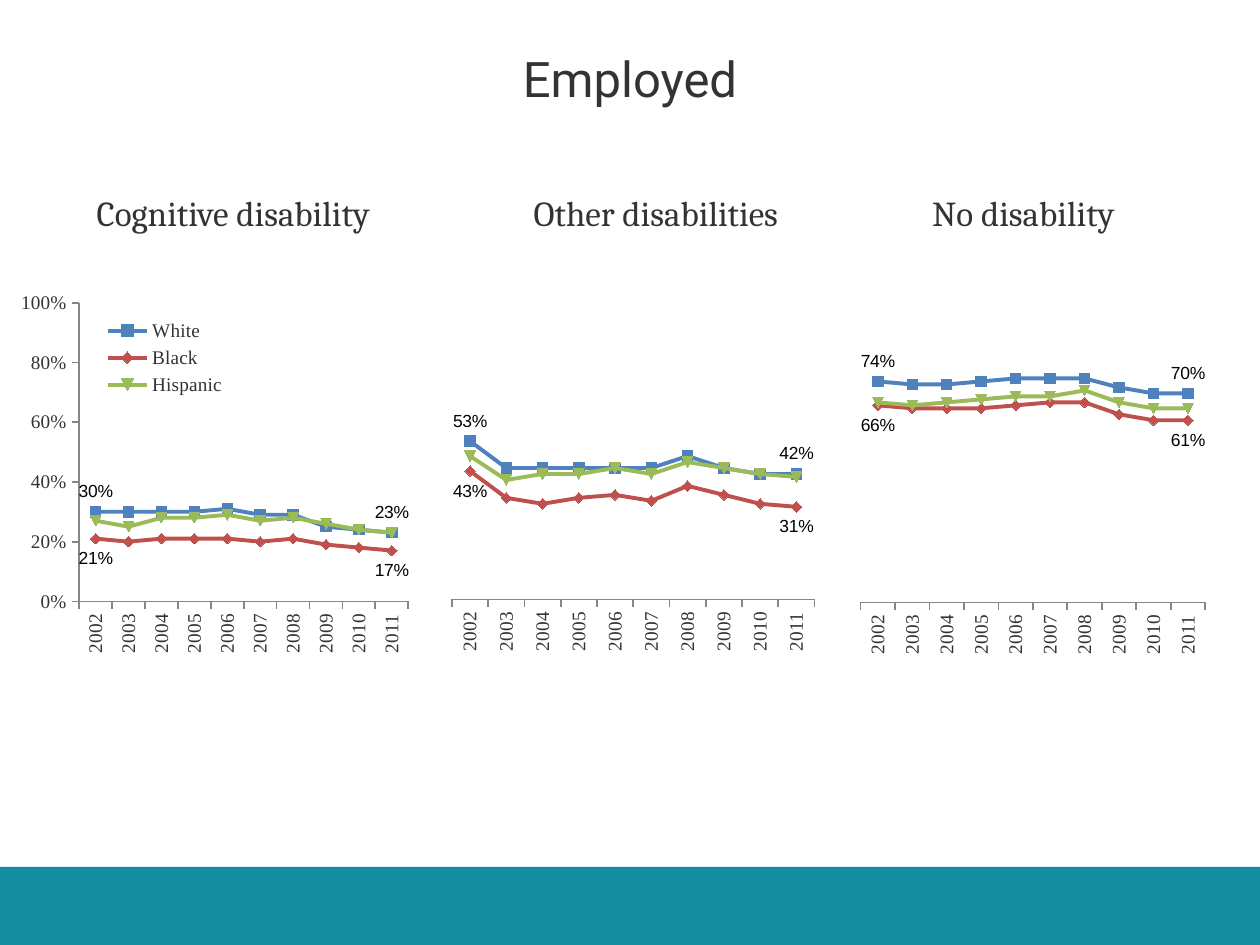
from lxml import etree
from pptx import Presentation
from pptx import util as u
from pptx.chart.data import CategoryChartData
from pptx.dml.color import RGBColor
from pptx.enum import chart as ch, shapes, text
from pptx.oxml.ns import qn

PX = 914400 / 126
TEAL = RGBColor(0x16, 0x8E, 0xA2)
INK = RGBColor(0x33, 0x33, 0x33)
BLACK = RGBColor(0, 0, 0)
GREY = RGBColor(0x86, 0x86, 0x86)
BLUE = RGBColor(0x4F, 0x81, 0xBD)
RED = RGBColor(0xC0, 0x50, 0x4D)
GREEN = RGBColor(0x9B, 0xBB, 0x59)

YEARS = [str(year) for year in range(2002, 2012)]
ABOVE, BELOW = ch.XL_LABEL_POSITION.ABOVE, ch.XL_LABEL_POSITION.BELOW
# Group name, line colour, position of the first and last value labels
GROUPS = [("White", BLUE, ABOVE), ("Black", RED, BELOW), ("Hispanic", GREEN, None)]

COGNITIVE = [
    [.30, .30, .30, .30, .31, .29, .29, .25, .24, .23],
    [.21, .20, .21, .21, .21, .20, .21, .19, .18, .17],
    [.27, .25, .28, .28, .29, .27, .28, .26, .24, .23],
]
OTHER = [
    [.53, .44, .44, .44, .44, .44, .48, .44, .42, .42],
    [.43, .34, .32, .34, .35, .33, .38, .35, .32, .31],
    [.48, .40, .42, .42, .44, .42, .46, .44, .42, .41],
]
NONE = [
    [.74, .73, .73, .74, .75, .75, .75, .72, .70, .70],
    [.66, .65, .65, .65, .66, .67, .67, .63, .61, .61],
    [.67, .66, .67, .68, .69, .69, .71, .67, .65, .65],
]


def px(length):
    return u.Emu(int(length * PX))


def set_layout(parent, index, box, inner=False):
    """Give a plot area or legend a fixed place, as fractions of the chart."""
    for old in parent.findall(qn("c:layout")):
        parent.remove(old)
    layout = etree.Element(qn("c:layout"))
    manual = etree.SubElement(layout, qn("c:manualLayout"))
    settings = [("layoutTarget", "inner")] if inner else []
    settings += [("xMode", "edge"), ("yMode", "edge"), *zip("xywh", box)]
    for name, value in settings:
        etree.SubElement(manual, qn("c:" + name)).set("val", str(value))
    parent.insert(index, layout)


class Deck:
    heading_font = "Roboto"
    body_font = "Cambria"
    axis_font = "Times New Roman"
    label_font = "Arial"

    def __init__(self):
        self.presentation = Presentation()
        self.presentation.slide_width = px(1260)
        self.presentation.slide_height = px(945)
        self.slide = self.presentation.slides.add_slide(
            self.presentation.slide_layouts[5])

    def style(self, font, name, size, color=INK):
        font.name, font.size, font.bold = name, u.Pt(size), False
        font.color.rgb = color

    def bar(self, left, top, width, height, color):
        shape = self.slide.shapes.add_shape(
            shapes.MSO_SHAPE.RECTANGLE, px(left), px(top), px(width), px(height))
        shape.shadow.inherit = False
        shape.fill.solid()
        shape.fill.fore_color.rgb = color
        shape.line.fill.background()

    def title(self, words, left, top, width, height):
        title = self.slide.shapes.title
        title.left, title.top = px(left), px(top)
        title.width, title.height = px(width), px(height)
        frame = title.text_frame
        frame.text = words
        frame.vertical_anchor = text.MSO_ANCHOR.MIDDLE
        paragraph = frame.paragraphs[0]
        paragraph.alignment = text.PP_ALIGN.CENTER
        self.style(paragraph.runs[0].font, self.heading_font, 28)

    def headings(self, words, left, top, widths, row_height):
        table = self.slide.shapes.add_table(
            2, len(words), px(left), px(top), px(sum(widths)), px(2 * row_height)).table
        table.horz_banding = False
        for row in table.rows:
            row.height = px(row_height)
        for column, width in zip(table.columns, widths):
            column.width = px(width)
        for cell in table.iter_cells():
            cell.fill.background()
        table.cell(0, 0).merge(table.cell(1, 0))
        table.cell(1, 1).merge(table.cell(1, 2))
        for index, word in enumerate(words):
            cell = table.cell(0, index)
            cell.text = word
            paragraph = cell.text_frame.paragraphs[0]
            if index:
                paragraph.alignment = text.PP_ALIGN.CENTER
            self.style(paragraph.runs[0].font, self.body_font, 20)

    def axis(self, axis):
        axis.has_major_gridlines = False
        axis.major_tick_mark = ch.XL_TICK_MARK.OUTSIDE
        axis.minor_tick_mark = ch.XL_TICK_MARK.NONE
        axis.format.line.color.rgb = GREY
        axis.format.line.width = u.Pt(1)
        self.style(axis.tick_labels.font, self.axis_font, 11)

    def line_chart(self, rows, left, top, width, height, plot_box, keyed=False):
        data = CategoryChartData(number_format="0%")
        data.categories = YEARS
        for (name, _, _), values in zip(GROUPS, rows):
            data.add_series(name, values)
        chart = self.slide.shapes.add_chart(
            ch.XL_CHART_TYPE.LINE_MARKERS, px(left), px(top), px(width), px(height),
            data).chart
        chart.has_title = False
        self.style(chart.font, self.body_font, 10)
        chart.plots[0].vary_by_categories = False

        # Axes: years read upwards, the share scale shows on the keyed chart only
        years, share = chart.category_axis, chart.value_axis
        self.axis(years)
        self.axis(share)
        body = years._element.find(qn("c:txPr")).find(qn("a:bodyPr"))
        body.set("rot", "-5400000")
        body.set("vert", "horz")
        share.minimum_scale, share.maximum_scale, share.major_unit = 0, 1, 0.2
        share.tick_labels.number_format = "###0%"
        share.tick_labels.number_format_is_linked = False
        share.visible = keyed
        plot_area = chart._chartSpace.chart.plotArea
        set_layout(plot_area, 0, plot_box, inner=True)

        # Legend
        chart.has_legend = keyed
        if keyed:
            chart.legend.position = ch.XL_LEGEND_POSITION.RIGHT
            chart.legend.include_in_layout = False
            self.style(chart.legend.font, self.axis_font, 11)
            set_layout(chart.legend._element, 1, (0.18, 0.08, 0.29, 0.23))

        # Lines, markers and end labels
        for series, (_, color, position) in zip(chart.plots[0].series, GROUPS):
            series.smooth = False
            series.format.line.color.rgb = color
            series.format.line.width = u.Pt(2.25)
            series.marker.size = 6
            series.marker.format.fill.solid()
            series.marker.format.fill.fore_color.rgb = color
            series.marker.format.line.color.rgb = color
            if position is not None:
                for index in (0, len(YEARS) - 1):
                    label = series.points[index].data_label
                    self.style(label.font, self.label_font, 10, BLACK)
                    label.position = position

    def save(self):
        self.presentation.save("out.pptx")


def main():
    deck = Deck()
    deck.bar(0, 867, 1260, 78, TEAL)
    deck.title("Employed", 21, 42, 1218, 72)
    deck.line_chart(COGNITIVE, 21, 284, 440, 378, (0.13, 0.05, 0.75, 0.79), keyed=True)
    deck.line_chart(OTHER, 451, 282, 391, 378, (0, 0.05, 0.93, 0.79))
    deck.line_chart(NONE, 853, 285, 383, 378, (0.02, 0.05, 0.9, 0.79))
    deck.headings(["Cognitive disability", "Other disabilities", "No disability"],
                  84, 189, [378, 388, 347], 55)
    deck.save()


if __name__ == "__main__":
    main()
